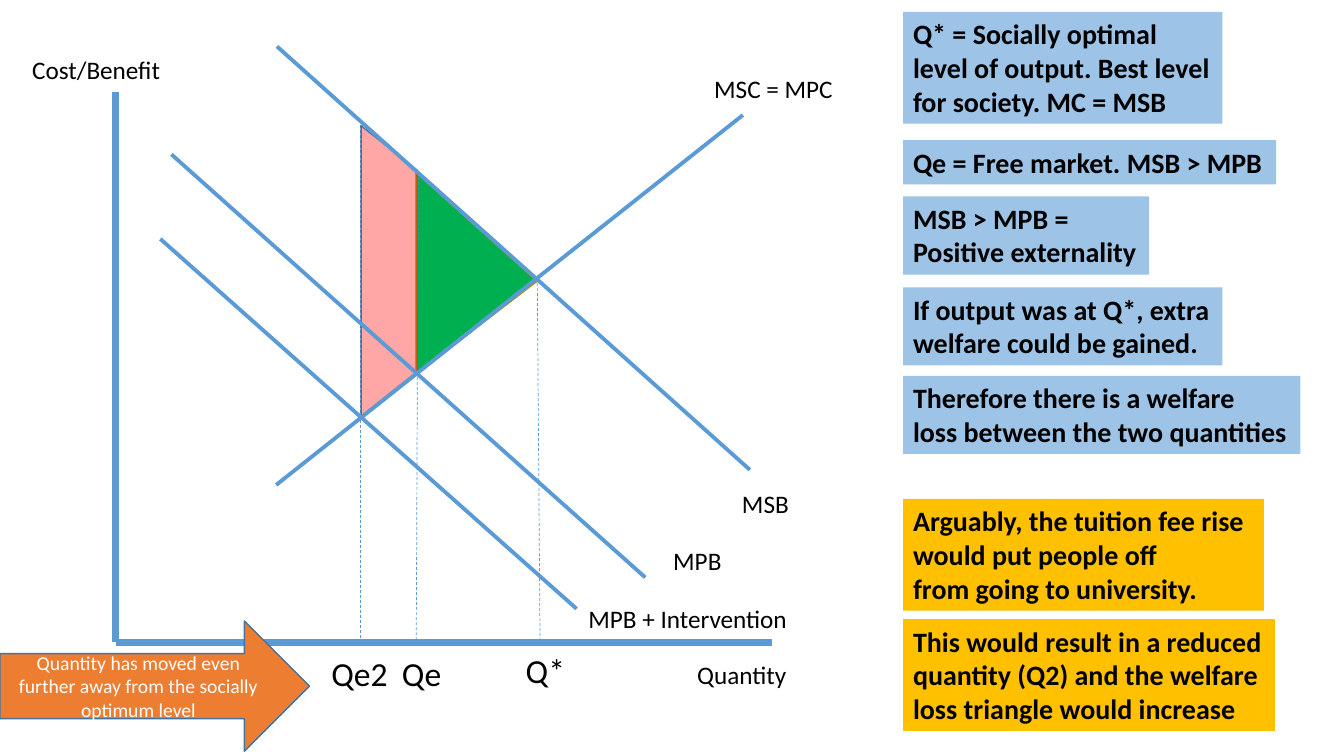
from lxml.etree import SubElement
from pptx import Presentation
from pptx.dml.color import RGBColor
from pptx.enum.dml import MSO_LINE
from pptx.enum.shapes import MSO_CONNECTOR, MSO_SHAPE
from pptx.enum.text import MSO_ANCHOR, MSO_AUTO_SIZE, PP_ALIGN
from pptx.oxml.ns import qn
from pptx.util import Cm, Pt

BLUE, LIGHT_BLUE, DARK_BLUE = "5B9BD5", "9DC3E6", "43739E"
AMBER, ORANGE, GREEN, RED = "FFC000", "ED7D31", "00B050", "FF0000"
BLACK, WHITE = "000000", "FFFFFF"


def color(target, hex_value):
    """Give a fill a solid colour."""
    target.solid()
    target.fore_color.rgb = RGBColor.from_string(hex_value)


def write(tf, text, size=18, bold=False, ink=BLACK, align=PP_ALIGN.LEFT):
    """Write text as one paragraph, with a line break at each newline."""
    p = tf.paragraphs[0]
    p.alignment = align
    for i, line in enumerate(text.split("\n")):
        if i:
            p.add_line_break()
        r = p.add_run()
        r.text = line
        r.font.name = "Calibri"
        r.font.size = Pt(size)
        r.font.bold = bold
        color(r.font.fill, ink)


class Diagram:
    """Holds the slide and draws each kind of element, in centimetres."""

    def __init__(self, slide):
        self.s = slide

    def line(self, start, end, width, dashed=False):
        ends = [Cm(v) for v in (*start, *end)]
        cx = self.s.shapes.add_connector(MSO_CONNECTOR.STRAIGHT, *ends)
        color(cx.line.fill, BLUE)
        cx.line.width = Pt(width)
        if dashed:
            cx.line.dash_style = MSO_LINE.DASH
        SubElement(cx._element.spPr, qn("a:effectLst"))

    def shape(self, kind, box, fill, outline, adjust=None, rotation=0, opacity=None):
        sp = self.s.shapes.add_shape(kind, *[Cm(v) for v in box])
        sp.shadow.inherit = False
        sp.rotation = rotation
        if adjust is not None:
            sp.adjustments[0] = adjust
        color(sp.fill, fill)
        if opacity is not None:
            rgb = sp._element.spPr.find(qn("a:solidFill"))[0]
            SubElement(rgb, qn("a:alpha"), val=str(opacity * 1000))
        color(sp.line.fill, outline)
        sp.line.width = Pt(1)
        return sp

    def text(self, box, text, wrap=False, fill=None, **style):
        sp = self.s.shapes.add_textbox(*[Cm(v) for v in box])
        if fill:
            color(sp.fill, fill)
        tf = sp.text_frame
        tf.word_wrap = wrap
        tf.auto_size = MSO_AUTO_SIZE.SHAPE_TO_FIT_TEXT
        write(tf, text, **style)

    def note(self, top, width, text, fill):
        height = 0.27 + 0.85 * len(text.split("\n"))
        self.text((22.76, top, width, height), text, fill=fill, size=20, bold=True)


def main():
    prs = Presentation()
    prs.slide_width, prs.slide_height = Cm(33.87), Cm(19.05)
    d = Diagram(prs.slides.add_slide(prs.slide_layouts[6]))

    # Welfare gain, axes and quantity guides
    d.shape(MSO_SHAPE.ISOSCELES_TRIANGLE, (9.47, 5.36, 5.08, 3.05), GREEN, "BD8E00",
            adjust=0.54, rotation=90)
    origin = (2.92, 16.18)
    d.line((2.92, 2.31), origin, 5)
    d.line(origin, (19.46, 16.18), 5)
    for start, foot in [((13.54, 7.01), 13.61), ((10.54, 4.34), 10.49), ((9.09, 3.15), 9.09)]:
        d.line(start, (foot, 16.18), 0.5, dashed=True)

    # Added welfare loss
    d.shape(MSO_SHAPE.TRAPEZOID, (6.15, 6.12, 7.32, 1.42), RED, DARK_BLUE,
            adjust=0.793, rotation=90, opacity=35)

    # Axis and curve labels
    for left, top, width, label in [
        (0.56, 1.24, 3.78, "Cost/Benefit"),
        (17.32, 16.48, 2.79, "Quantity"),
    ]:
        d.text((left, top, width, 1.02), label)
    d.text((17.75, 1.73, 3.91, 1.02), "MSC = MPC", wrap=True)
    for left, top, width, label in [
        (18.44, 12.17, 1.7, "MSB"),
        (16.71, 13.61, 1.73, "MPB"),
        (14.55, 15.09, 5.56, "MPB + Intervention"),
    ]:
        d.text((left, top, width, 1.02), label, align=PP_ALIGN.CENTER)
    for left, top, width, label in [
        (8.1, 16.33, 1.96, "Qe2"),
        (9.88, 16.33, 1.52, "Qe"),
        (13, 16.26, 1.52, "Q*"),
    ]:
        d.text((left, top, width, 1.27), label, size=24)

    # Explanations
    for top, width, text, fill in [
        (0.3, 8.05, "Q* = Socially optimal\nlevel of output. Best level\nfor society. MC = MSB", LIGHT_BLUE),
        (3.53, 9.4, "Qe = Free market. MSB > MPB", LIGHT_BLUE),
        (4.95, 6.2, "MSB > MPB = \nPositive externality", LIGHT_BLUE),
        (7.24, 8.05, "If output was at Q*, extra\nwelfare could be gained.", LIGHT_BLUE),
        (9.47, 10.01, "Therefore there is a welfare\nloss between the two quantities", LIGHT_BLUE),
        (12.57, 9.09, "Arguably, the tuition fee rise \nwould put people off\nfrom going to university.", AMBER),
        (15.6, 9.37, "This would result in a reduced\nquantity (Q2) and the welfare\nloss triangle would increase", AMBER),
    ]:
        d.note(top, width, text, fill)

    # Arrow towards the new quantity
    arrow = d.shape(MSO_SHAPE.RIGHT_ARROW, (0, 15.65, 7.8, 3.28), ORANGE, DARK_BLUE)
    tf = arrow.text_frame
    tf.word_wrap = True
    tf.vertical_anchor = MSO_ANCHOR.MIDDLE
    write(tf, "Quantity has moved even further away from the socially optimum level",
          size=14, ink=WHITE, align=PP_ALIGN.CENTER)

    # Curves: MSB, MSC, MPB, MPB + intervention
    for start, end in [
        ((6.98, 1.17), (18.9, 11.84)),
        ((6.96, 12.22), (18.72, 2.9)),
        ((4.32, 3.89), (16.26, 14.55)),
        ((4.04, 6.02), (14.53, 15.34)),
    ]:
        d.line(start, end, 2.75)

    prs.save("out.pptx")


if __name__ == "__main__":
    main()
